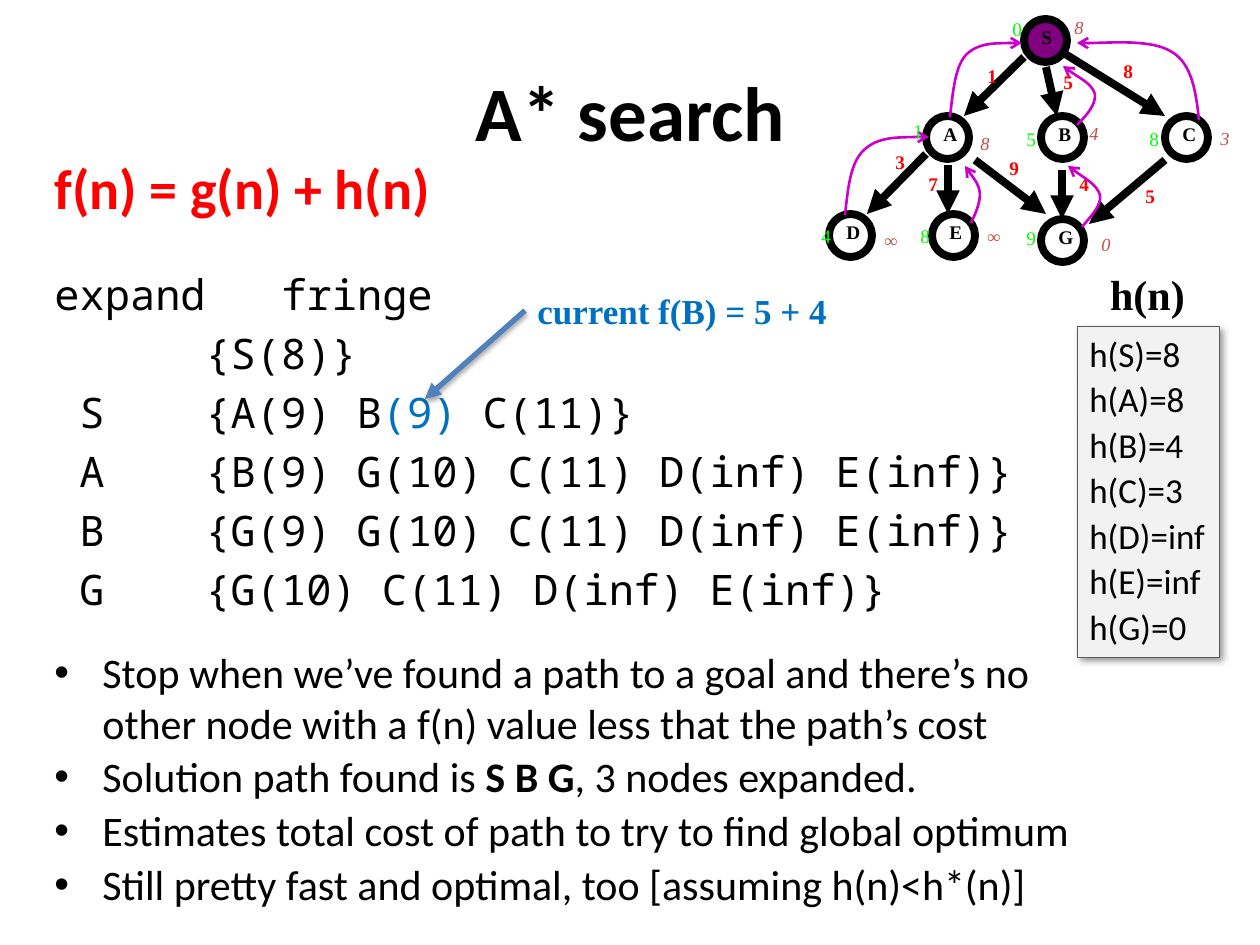
from lxml import etree
from pptx import Presentation
from pptx import util as u
from pptx.dml.color import RGBColor
from pptx.enum import shapes, text
from pptx.oxml.ns import qn

PX = 7257
BLACK = RGBColor(0, 0, 0)
RED = RGBColor(255, 0, 0)
GREEN = RGBColor(0, 255, 0)
BLUE = RGBColor(0x00, 0x70, 0xC0)
STEEL = RGBColor(0x4F, 0x81, 0xBD)
BRICK = RGBColor(0xC0, 0x50, 0x4D)
PURPLE = RGBColor(0x80, 0, 0x80)
MAGENTA = RGBColor(0xCC, 0, 0xCC)
PALE = RGBColor(0xF2, 0xF2, 0xF2)
GREY = RGBColor(0x59, 0x59, 0x59)
SERIF = "Times New Roman"


def add_label(parent, words, box, size, color, bold=True, italic=False, name=SERIF, align=text.PP_ALIGN.LEFT):
    shape = parent.add_textbox(*[n * PX for n in box])
    shape.text_frame.word_wrap = False
    paragraph = shape.text_frame.paragraphs[0]
    paragraph.text = words
    paragraph.alignment = align
    font = paragraph.font
    font.name, font.size, font.bold, font.italic = name, u.Pt(size), bold, italic
    font.color.rgb = color
    return shape


def style_arrow(shape, color, width, head):
    shape.line.color.rgb = color
    shape.line.width = u.Pt(width)
    properties = shape.element.spPr
    etree.SubElement(properties.find(qn("a:ln")), qn("a:tailEnd"), type=head)
    return etree.SubElement(properties, qn("a:effectLst"))


presentation = Presentation()
presentation.slide_width = u.Inches(10)
presentation.slide_height = u.Inches(7.5)
slide = presentation.slides.add_slide(presentation.slide_layouts[6])

title = add_label(slide.shapes, "A* search", (95, 32, 1071, 158), 44, BLACK,
                  name="Calibri", align=text.PP_ALIGN.CENTER)
title.text_frame.word_wrap = True
title.text_frame.vertical_anchor = text.MSO_ANCHOR.MIDDLE

body = add_label(slide.shapes, "f(n) = g(n) + h(n)", (42, 147, 1218, 727), 32, RED, name="Calibri")
body.text_frame.word_wrap = True

trace = [
    ("expand\tfringe", "", "", [227]),
    ("\t{S(8)}", "", "", [151]),
    ("\tS\t{A(9) B", "(9)", " C(11)}", [25, 151]),
    ("\tA\t{B(9) G(10) C(11) D(inf) E(inf)}", "", "", [25, 151]),
    ("\tB\t{G(9) G(10) C(11) D(inf) E(inf)}", "", "", [25, 151]),
    ("\tG\t{G(10) C(11) D(inf) E(inf)}", "", "", [25, 151]),
]
bullets = [
    ("Stop when we’ve found a path to a goal and there’s no\vother node with a f(n) value less that the path’s cost", "", "", []),
    ("Solution path found is ", "S B G", ", 3 nodes expanded.", []),
    ("Estimates total cost of path to try to find global optimum", "", "", []),
    ("Still pretty fast and optimal, too [assuming h(n)<h*(n)]", "", "", []),
]
for lines, name, first_gap, gap in [(trace, "Noto Sans Mono", 27.3, 5), (bullets, "Calibri", 18.5, 2)]:
    for index, (before, highlight, after, stops) in enumerate(lines):
        paragraph = body.text_frame.add_paragraph()
        paragraph.text = before
        paragraph.space_before = u.Pt(gap if index else first_gap)
        properties = paragraph._p.get_or_add_pPr()
        if stops:
            tabs = etree.SubElement(properties, qn("a:tabLst"))
            for stop in stops:
                etree.SubElement(tabs, qn("a:tab"), pos=str(stop * PX), algn="l")
        else:
            properties.set("marL", str(48 * PX))
            properties.set("indent", str(-48 * PX))
            etree.SubElement(properties, qn("a:buFont"), typeface="Arial")
            etree.SubElement(properties, qn("a:buChar"), char="•")
        paragraph.font.name = name
        paragraph.font.size = u.Pt(24)
        paragraph.font.color.rgb = BLACK
        if highlight:
            run = paragraph.add_run()
            run.text = highlight
            if stops:
                run.font.color.rgb = BLUE
            else:
                run.font.bold = True
            paragraph.add_run().text = after

graph = slide.shapes.add_group_shape().shapes
nodes = [("S", 1024, 19), ("C", 1165, 116), ("B", 1041, 116), ("A", 926, 116),
         ("D", 829, 214), ("G", 1041, 219), ("E", 932, 214)]
for name, x, y in nodes:
    node = graph.add_shape(shapes.MSO_SHAPE.OVAL, x * PX, y * PX, 43 * PX, 43 * PX)
    node.shadow.inherit = False
    if name == "S":
        node.fill.solid()
        node.fill.fore_color.rgb = PURPLE
    else:
        node.fill.background()
    node.line.color.rgb = BLACK
    node.line.width = u.Pt(4.5)
    add_label(graph, name, (x + 5, y, 37, 34), 11, BLACK)

edges = [(1024, 57, 964, 116), (948, 165, 948, 214), (975, 160, 1046, 214), (1046, 67, 1057, 116),
         (1062, 52, 1165, 116), (1062, 170, 1062, 219), (1165, 160, 1089, 224), (926, 154, 867, 214)]
for edge in edges:
    connector = graph.add_connector(shapes.MSO_CONNECTOR.STRAIGHT, *[n * PX for n in edge])
    style_arrow(connector, BLACK, 4.5, "triangle")

edge_costs = [("1", 975, 58), ("5", 1051, 64), ("8", 1111, 53), ("9", 997, 150),
              ("4", 1067, 166), ("5", 1133, 178), ("3", 883, 144), ("7", 916, 166)]
for cost, x, y in edge_costs:
    add_label(graph, cost, (x, y, 34, 34), 11, RED)

heuristics = [("8", 1062, 10), ("8", 968, 126), ("4", 1077, 116), ("3", 1208, 121),
              ("∞", 975, 219), ("∞", 872, 223), ("0", 1089, 227)]
for estimate, x, y in heuristics:
    add_label(graph, estimate, (x, y, 40, 34), 10.5, BRICK, bold=False, italic=True)

back_pointers = [
    [(950, 117), (953, 92), (955, 67), (966, 55), (978, 43), (1000, 43), (1022, 43)],
    [(845, 215), (848, 189), (850, 163), (864, 150), (878, 137), (903, 137), (929, 137)],
    [(971, 223), (976, 213), (980, 203), (980, 194), (979, 184), (968, 170), (965, 166)],
    [(1082, 227), (1092, 215), (1102, 205), (1100, 195), (1097, 185), (1074, 171), (1068, 166)],
    [(1077, 125), (1087, 115), (1096, 105), (1095, 94), (1092, 84), (1068, 71), (1063, 66)],
    [(1199, 120), (1196, 92), (1192, 64), (1172, 52), (1152, 39), (1094, 44), (1077, 43)],
]
for start, *points in back_pointers:
    builder = graph.build_freeform(*start, scale=PX)
    builder.add_line_segments(points, close=False)
    curve = builder.convert_to_shape()
    outline = curve.element.find(".//" + qn("a:path"))
    segments = outline.findall(qn("a:lnTo"))
    for first in range(0, len(segments), 3):
        bezier = etree.SubElement(outline, qn("a:cubicBezTo"))
        for segment in segments[first:first + 3]:
            bezier.append(segment[0])
            outline.remove(segment)
    curve.fill.background()
    style_arrow(curve, MAGENTA, 1.5, "arrow")

path_costs = [("0", 1000, 11), ("1", 901, 113), ("4", 809, 218), ("8", 908, 218),
              ("9", 1014, 220), ("8", 1137, 121), ("5", 1014, 121)]
for cost, x, y in path_costs:
    add_label(graph, cost, (x, y, 34, 34), 11, GREEN, bold=False)

table_box = slide.shapes.add_shape(shapes.MSO_SHAPE.RECTANGLE, 1077 * PX, 326 * PX, 142 * PX, 331 * PX)
table_box.fill.solid()
table_box.fill.fore_color.rgb = PALE
table_box.line.color.rgb = GREY
table_box.line.width = u.Pt(0.25)
table_box.shadow.inherit = False
frame = table_box.text_frame
frame.word_wrap = False
frame.vertical_anchor = text.MSO_ANCHOR.TOP
frame.text = "\n".join(f"h({name})={value}" for name, value in zip("SABCDEG", [8, 8, 4, 3, "inf", "inf", 0]))
for paragraph in frame.paragraphs:
    paragraph.alignment = text.PP_ALIGN.LEFT
    paragraph.space_after = u.Pt(2)
    paragraph.font.name = "Calibri"
    paragraph.font.size = u.Pt(20)
    paragraph.font.color.rgb = BLACK

add_label(slide.shapes, "h(n)", (1077, 262, 141, 63), 24, BLACK, align=text.PP_ALIGN.CENTER)
callout = add_label(slide.shapes, "current f(B) = 5 + 4", (525, 283, 318, 55), 20, BLUE)
pointer = slide.shapes.add_connector(shapes.MSO_CONNECTOR.STRAIGHT, 525 * PX, 311 * PX, 425 * PX, 399 * PX)
pointer.begin_connect(callout, 1)
pointer_effects = style_arrow(pointer, STEEL, 3, "triangle")

table_effects = table_box.element.spPr.find(qn("a:effectLst"))
for effects, blur, distance, angle, opacity in [(table_effects, 4, 3, 45, 40), (pointer_effects, 3.1, 1.6, 90, 38)]:
    shadow = etree.SubElement(effects, qn("a:outerShdw"), blurRad=str(u.Pt(blur)), dist=str(u.Pt(distance)),
                              dir=str(angle * 60000), algn="tl", rotWithShape="0")
    shade = etree.SubElement(shadow, qn("a:srgbClr"), val="000000")
    etree.SubElement(shade, qn("a:alpha"), val=str(opacity * 1000))

presentation.save("out.pptx")
